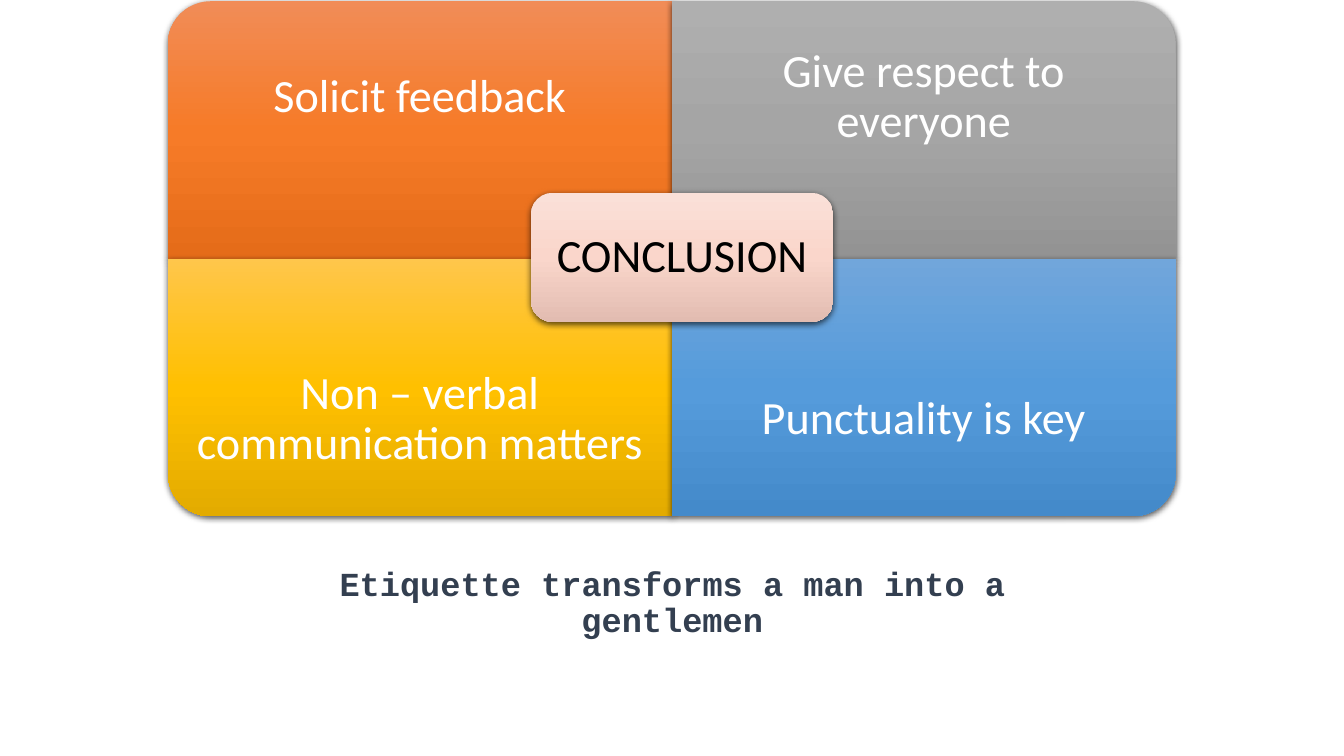
import dataclasses

import lxml.etree
import pptx
import pptx.dml.color
import pptx.enum.shapes
import pptx.enum.text
import pptx.oxml
import pptx.oxml.ns
import pptx.util

Cm = pptx.util.Cm
Shape = pptx.enum.shapes.MSO_SHAPE
Anchor = pptx.enum.text.MSO_ANCHOR


@dataclasses.dataclass(frozen=True)
class Theme:
    label_font: str = "Calibri"
    motto_font: str = "Courier New"
    label_size: int = 33
    motto_size: int = 24
    label_color: str = "FFFFFF"
    hub_color: str = "000000"
    motto_color: str = "333F50"
    orange: tuple = ("F18C57", "F67B28", "E56C19")
    gray: tuple = ("AFAFAF", "A5A5A5", "939393")
    gold: tuple = ("FFC64B", "FFC000", "E3AB00")
    blue: tuple = ("71A6DB", "559BDB", "448ACA")
    blush: tuple = ("FAE0D8", "FAD6CB", "E2BCB1")


def write_text(frame, text, font, size, color, bold=False, anchor=Anchor.MIDDLE, inset=None):
    frame.word_wrap = True
    frame.auto_size = pptx.enum.text.MSO_AUTO_SIZE.NONE
    frame.vertical_anchor = anchor
    if inset is not None:
        frame.margin_left = frame.margin_right = Cm(inset)
        frame.margin_top = frame.margin_bottom = Cm(inset)
    paragraph = frame.paragraphs[0]
    paragraph.alignment = pptx.enum.text.PP_ALIGN.CENTER
    paragraph.line_spacing = 0.9
    paragraph.space_before = pptx.util.Pt(0)
    run = paragraph.add_run()
    run.text = text
    run.font.name = font
    run.font.size = pptx.util.Pt(size)
    run.font.bold = bold
    run.font.color.rgb = pptx.dml.color.RGBColor.from_string(color)


class SlideBuilder:
    def __init__(self, slide, theme):
        self.slide = slide
        self.theme = theme
        self.matrix = slide.shapes.add_group_shape().shapes

    def panel(self, preset, left, top, width, height, shades, rotation=0):
        if rotation % 180:
            left, top = left + (width - height) / 2, top + (height - width) / 2
            width, height = height, width
        panel = self.matrix.add_shape(preset, Cm(left), Cm(top), Cm(width), Cm(height))
        panel.rotation = rotation
        panel.line.fill.background()
        panel.shadow.inherit = False
        self.shade(panel, shades)
        return panel

    def shade(self, panel, shades):
        panel.fill.gradient()
        gradient = panel.fill._fill._gradFill
        gradient.set("rotWithShape", "0")
        qn = pptx.oxml.ns.qn
        for child in list(gradient):
            gradient.remove(child)
        stops = lxml.etree.SubElement(gradient, qn("a:gsLst"))
        for index, color in enumerate(shades):
            stop = lxml.etree.SubElement(stops, qn("a:gs"), pos=str(index * 50000))
            lxml.etree.SubElement(stop, qn("a:srgbClr"), val=color)
        lxml.etree.SubElement(gradient, qn("a:lin"), ang="5400000", scaled="0")
        effects = panel._element.spPr.find(qn("a:effectLst"))
        shadow = lxml.etree.SubElement(
            effects, qn("a:outerShdw"), blurRad="57150", dist="19050",
            dir="5400000", algn="ctr", rotWithShape="0")
        black = lxml.etree.SubElement(shadow, qn("a:srgbClr"), val="000000")
        lxml.etree.SubElement(black, qn("a:alpha"), val="63000")

    def label(self, text, left, top, width, height):
        box = self.matrix.add_textbox(Cm(left), Cm(top), Cm(width), Cm(height))
        write_text(box.text_frame, text, font=self.theme.label_font, inset=0.66,
                   size=self.theme.label_size, color=self.theme.label_color)

    def hub(self, text, left, top, width, height):
        hub = self.panel(Shape.ROUNDED_RECTANGLE, left, top, width, height, self.theme.blush)
        write_text(hub.text_frame, text, font=self.theme.label_font, inset=0.36,
                   size=self.theme.label_size, color=self.theme.hub_color)

    def motto(self, text, left, top, width, height):
        motto = self.slide.placeholders[1]
        motto.left, motto.top = Cm(left), Cm(top)
        motto.width, motto.height = Cm(width), Cm(height)
        write_text(motto.text_frame, text, font=self.theme.motto_font, bold=True,
                   size=self.theme.motto_size, color=self.theme.motto_color, anchor=Anchor.TOP)


def main():
    theme = Theme()
    deck = pptx.Presentation()
    deck.slide_width, deck.slide_height = Cm(33.87), Cm(19.05)
    slide = deck.slides.add_slide(deck.slide_layouts[0])
    title = slide.shapes.title._element
    title.getparent().remove(title)
    builder = SlideBuilder(slide, theme)

    matrix_left, matrix_top = 4.23, 0.03
    width, height = 12.7, 6.49
    label_height = 0.75 * height
    quadrants = (
        ("Solicit feedback", 0, 0, 270, theme.orange),
        ("Give respect to everyone", 0, 1, 0, theme.gray),
        ("Non – verbal communication matters", 1, 0, 180, theme.gold),
        ("Punctuality is key", 1, 1, 90, theme.blue),
    )
    for text, row, column, rotation, shades in quadrants:
        left, top = matrix_left + column * width, matrix_top + row * height
        builder.panel(Shape.ROUND_1_RECTANGLE, left, top, width, height, shades, rotation)
        label_top = top + row * (height - label_height)
        builder.label(text, left, label_top, width, label_height)

    builder.hub("CONCLUSION", 13.38, 4.86, 7.62, 3.25)
    builder.motto("Etiquette transforms a man into a gentlemen", 8.05, 14.17, 17.78, 4.88)
    deck.save("out.pptx")


if __name__ == "__main__":
    main()
